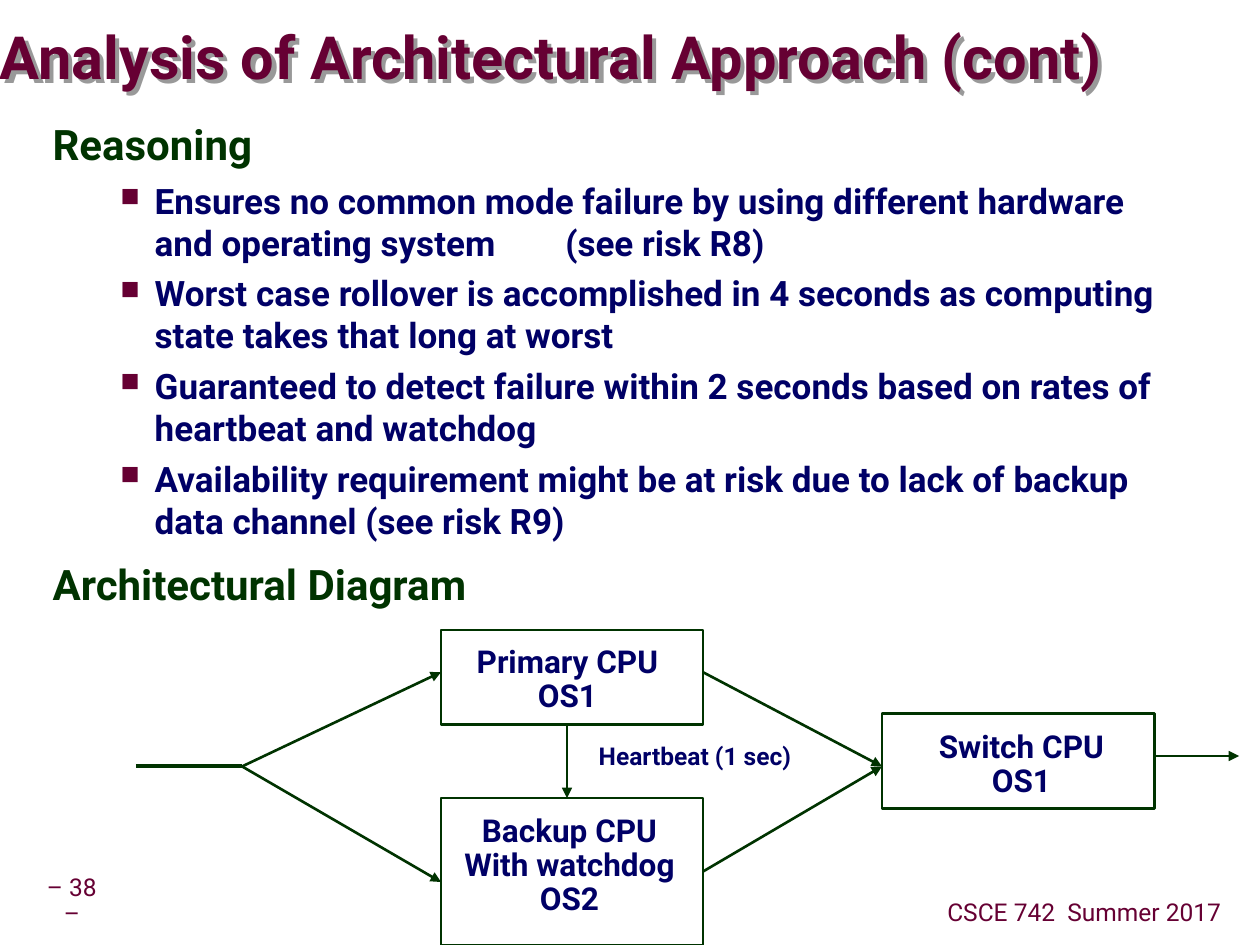
from lxml import etree
from pptx import Presentation
from pptx import util as u
from pptx.dml import color
from pptx.enum import shapes, text
from pptx.oxml import ns

FONT = "Roboto"
MAROON, GREEN, NAVY, GREY = "660033", "003300", "000066", "999999"
INSET = 0.13

REASONS = [
    "Ensures no common mode failure by using different hardware and operating system\t (see risk R8)",
    "Worst case rollover is accomplished in 4 seconds as computing state takes that long at worst",
    "Guaranteed to detect failure within 2 seconds based on rates of heartbeat and watchdog",
    "Availability requirement might be at risk due to lack of backup data channel (see risk R9)",
]

CPUS = [
    ((8.89, 16.09, 5.28, 2.96), (9.09, 16.31, 4.78, 2.31), ["Backup CPU", "With watchdog", "OS2"]),
    ((17.78, 14.39, 5.5, 1.91), (18.67, 14.61, 3.84, 1.63), ["Switch CPU", "OS1"]),
    ((8.89, 12.7, 5.28, 1.91), (9.37, 12.9, 4.14, 1.63), ["Primary CPU", "OS1"]),
]

SPLIT, SWITCH_IN = (4.88, 15.45), (17.78, 15.45)
ARROWS = [
    (SPLIT, (8.89, 17.78)),
    (SPLIT, (8.89, 13.55)),
    ((11.43, 14.61), (11.43, 16.09)),
    ((14.17, 13.55), SWITCH_IN),
    ((14.17, 17.57), SWITCH_IN),
    ((23.28, 15.24), (24.98, 15.24)),
]


def rgb(value):
    return color.RGBColor.from_string(value)


def add_element(parent, tag, **attributes):
    return etree.SubElement(parent, ns.qn(tag), attributes)


def add_box(slide, place, inset_x=INSET, inset_y=INSET, wrap=False, middle=False):
    box = slide.shapes.add_textbox(*map(u.Cm, place))
    frame = box.text_frame
    frame.word_wrap = wrap
    frame.margin_left = frame.margin_right = u.Cm(inset_x)
    frame.margin_top = frame.margin_bottom = u.Cm(inset_y)
    frame.vertical_anchor = text.MSO_ANCHOR.MIDDLE if middle else text.MSO_ANCHOR.TOP
    return box


def next_paragraph(frame):
    first = frame.paragraphs[0]
    return frame.add_paragraph() if first.runs else first


def add_run(paragraph, words, size, colour, bold=True):
    run = paragraph.add_run()
    run.text = words
    run.font.name = FONT
    run.font.size = u.Pt(size)
    run.font.bold = bold
    run.font.color.rgb = rgb(colour)


def add_label(slide, place, lines, size, colour=NAVY, bold=True, centred=True, **box_options):
    frame = add_box(slide, place, **box_options).text_frame
    for words in lines:
        paragraph = next_paragraph(frame)
        paragraph.alignment = text.PP_ALIGN.CENTER if centred else text.PP_ALIGN.LEFT
        paragraph.line_spacing = 0.9
        add_run(paragraph, words, size, colour, bold)


def add_title(slide, words):
    box = add_box(slide, (0, 0.2, 25.35, 2.06), 0, 0, wrap=True, middle=True)
    paragraph = box.text_frame.paragraphs[0]
    paragraph.line_spacing = 0.87
    add_run(paragraph, words, 34, MAROON)
    effects = add_element(box.fill._xPr, "a:effectLst")
    shadow = add_element(effects, "a:outerShdw", dist=str(u.Cm(0.12)), dir="2700000", algn="ctr", rotWithShape="0")
    add_element(shadow, "a:srgbClr", val=GREY)


def add_heading(frame, words):
    paragraph = next_paragraph(frame)
    paragraph.line_spacing = 0.95
    if paragraph is not frame.paragraphs[0] and len(frame.paragraphs) > 1:
        paragraph.space_before = u.Pt(12)
    add_run(paragraph, words, 24, GREEN)


def add_bullet(frame, words):
    paragraph = next_paragraph(frame)
    paragraph.level = 1
    paragraph.space_before = u.Pt(5)
    properties = paragraph._p.get_or_add_pPr()
    properties.set("marL", str(u.Cm(2.06)))
    properties.set("indent", str(u.Cm(-0.69)))
    bullet_colour = add_element(properties, "a:buClr")
    add_element(bullet_colour, "a:srgbClr", val=MAROON)
    add_element(properties, "a:buSzPct", val="75000")
    add_element(properties, "a:buChar", char="■")
    add_run(paragraph, words, 20, NAVY)


def add_body(slide):
    frame = add_box(slide, (0.81, 2.34, 23.09, 10.36), 0.25, wrap=True).text_frame
    add_heading(frame, "Reasoning")
    for reason in REASONS:
        add_bullet(frame, reason)
    add_heading(frame, "Architectural Diagram")


def add_frame(slide, place):
    shape = slide.shapes.add_shape(shapes.MSO_SHAPE.RECTANGLE, *map(u.Cm, place))
    shape.shadow.inherit = False
    shape.fill.background()
    shape.line.color.rgb = rgb(GREEN)
    shape.line.width = u.Pt(1.5)


def add_line(slide, start, end, width=1.5, arrow=True):
    line = slide.shapes.add_connector(shapes.MSO_CONNECTOR.STRAIGHT, *map(u.Cm, start + end))
    line.line.color.rgb = rgb(GREEN)
    line.line.width = u.Pt(width)
    if arrow:
        add_element(line.line._get_or_add_ln(), "a:tailEnd", type="triangle")
    add_element(line._element.spPr, "a:effectLst")


def add_diagram(slide):
    for _, label_place, lines in CPUS:
        add_label(slide, label_place, lines, 18)
    for frame_place, _, _ in CPUS:
        add_frame(slide, frame_place)
    add_line(slide, (2.74, 15.45), SPLIT, width=2.25, arrow=False)
    for start, end in ARROWS:
        add_line(slide, start, end)
    add_label(slide, (11.94, 14.88, 4.22, 0.79), ["Heartbeat (1 sec)"], 14, centred=False)


def main():
    presentation = Presentation()
    presentation.slide_width = u.Cm(25.4)
    presentation.slide_height = u.Cm(19.05)
    slide = presentation.slides.add_slide(presentation.slide_layouts[6])
    add_label(slide, (0.61, 17.78, 1.68, 0.79), ["– 38 –"], 14, MAROON, bold=False,
              inset_x=0.25, wrap=True, middle=True)
    add_label(slide, (18.85, 18.03, 6.02, 0.79), ["CSCE 742  Summer 2017"], 14, MAROON,
              bold=False, middle=True)
    add_title(slide, "Analysis of Architectural Approach (cont)")
    add_body(slide)
    add_diagram(slide)
    presentation.save("out.pptx")


if __name__ == "__main__":
    main()
